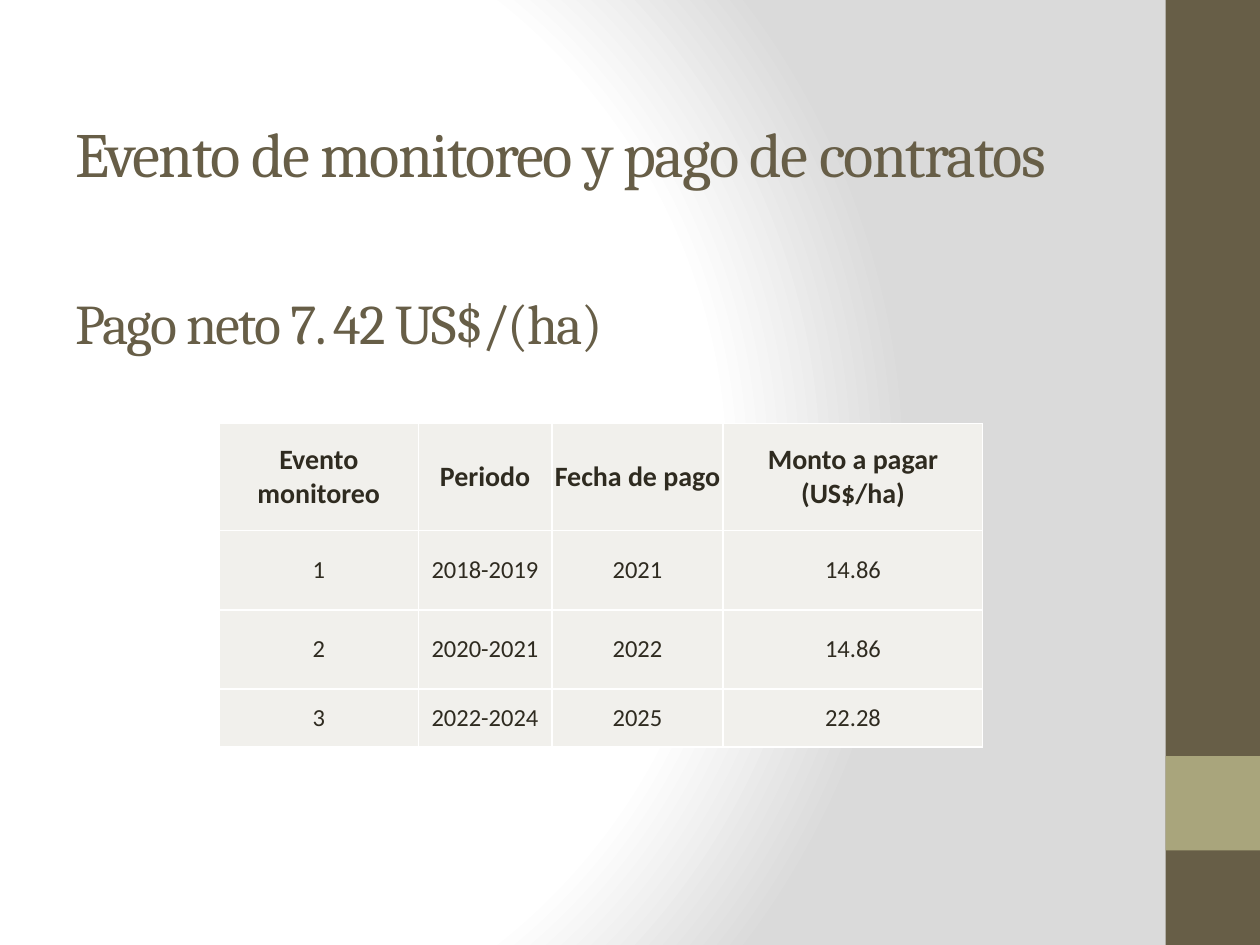
from dataclasses import dataclass

from lxml import etree
from pptx import Presentation
from pptx.dml.color import RGBColor
from pptx.enum.shapes import MSO_SHAPE
from pptx.enum.text import MSO_ANCHOR, PP_ALIGN
from pptx.oxml import parse_xml
from pptx.oxml.ns import nsdecls, qn
from pptx.util import Inches, Pt

RECTANGLE = MSO_SHAPE.RECTANGLE
TOP, MIDDLE = MSO_ANCHOR.TOP, MSO_ANCHOR.MIDDLE
CENTER = PP_ALIGN.CENTER
BLANK_LAYOUT = 6


@dataclass(frozen=True)
class Theme:
    brown: str = "675E47"
    olive: str = "A9A57C"
    ink: str = "2F2B20"
    cell: str = "F1F0EC"
    white: str = "FFFFFF"
    grey: str = "DADADA"
    heading_font: str = "Cambria"
    body_font: str = "Calibri"
    title_size: int = 36
    subtitle_size: int = 32
    header_size: int = 16
    body_size: int = 14


class SlideBuilder:
    def __init__(self, slide, theme):
        self.s = slide
        self.theme = theme

    def background(self):
        """Circular gradient whose centre lies left of the middle."""
        t = self.theme
        stops = "".join(
            f'<a:gs pos="{pos * 1000}"><a:srgbClr val="{color}"/></a:gs>'
            for pos, color in ((0, t.white), (75, t.white), (100, t.grey))
        )
        bg = parse_xml(
            f'<p:bg {nsdecls("p", "a")}><p:bgPr><a:gradFill rotWithShape="1">'
            f'<a:gsLst>{stops}</a:gsLst><a:path path="circle">'
            '<a:fillToRect l="20000" t="50000" r="100000" b="50000"/>'
            "</a:path></a:gradFill><a:effectLst/></p:bgPr></p:bg>"
        )
        self.s.element.cSld.insert(0, bg)

    def block(self, left, top, width, height, color):
        sp = self.s.shapes.add_shape(
            RECTANGLE, Inches(left), Inches(top), Inches(width), Inches(height)
        )
        sp.shadow.inherit = False
        sp.fill.solid()
        sp.fill.fore_color.rgb = RGBColor.from_string(color)
        sp.line.fill.background()

    def run(self, p, text, font, size, color, bold=False):
        r = p.add_run()
        r.text = text
        r.font.name = font
        r.font.size = Pt(size)
        r.font.bold = bold
        r.font.color.rgb = RGBColor.from_string(color)
        return r

    def heading(self, left, top, width, height, title, subtitle):
        t = self.theme
        sp = self.s.shapes.add_textbox(
            Inches(left), Inches(top), Inches(width), Inches(height)
        )
        tf = sp.text_frame
        tf.word_wrap = True
        tf.vertical_anchor = TOP
        tf.margin_top = Inches(0.61)
        title_p, subtitle_p = tf.paragraphs[0], tf.add_paragraph()
        subtitle_p.space_before = Pt(56)
        for p, text, size in (
            (title_p, title, t.title_size),
            (subtitle_p, subtitle, t.subtitle_size),
        ):
            r = self.run(p, text, t.heading_font, size, t.brown)
            r.font._element.set("spc", "-100")

    def table(self, left, top, col_widths, row_heights, rows):
        frame = self.s.shapes.add_table(
            len(rows), len(col_widths), Inches(left), Inches(top),
            Inches(sum(col_widths)), Inches(sum(row_heights)),
        )
        table = frame.table
        for column, width in zip(table.columns, col_widths):
            column.width = Inches(width)
        for row, height in zip(table.rows, row_heights):
            row.height = Inches(height)
        for i, values in enumerate(rows):
            for j, text in enumerate(values):
                self.cell(table.cell(i, j), text, header=i == 0)

    def cell(self, cell, text, header):
        t = self.theme
        cell.vertical_anchor = MIDDLE
        cell.margin_left = cell.margin_right = Inches(0.01)
        cell.margin_top = cell.margin_bottom = Inches(0.07)
        p = cell.text_frame.paragraphs[0]
        p.alignment = CENTER
        size = t.header_size if header else t.body_size
        self.run(p, text, t.body_font, size, t.ink, bold=header)
        self.borders(cell)
        cell.fill.solid()
        cell.fill.fore_color.rgb = RGBColor.from_string(t.cell)

    def borders(self, cell):
        tc_pr = cell._tc.get_or_add_tcPr()
        for side in ("a:lnL", "a:lnR", "a:lnT", "a:lnB"):
            ln = etree.SubElement(tc_pr, qn(side), w=str(Pt(1)))
            fill = etree.SubElement(ln, qn("a:solidFill"))
            etree.SubElement(fill, qn("a:srgbClr"), val=self.theme.white)


def main():
    prs = Presentation()
    prs.slide_width, prs.slide_height = Inches(10), Inches(7.5)
    theme = Theme()
    slide = SlideBuilder(
        prs.slides.add_slide(prs.slide_layouts[BLANK_LAYOUT]), theme
    )
    slide.background()
    slide.block(9.25, 0, 0.75, 7.5, theme.brown)
    slide.block(9.25, 6, 0.75, 0.75, theme.olive)
    slide.heading(
        0.5, 0.3, 8.33, 1.53,
        "Evento de monitoreo y pago de contratos",
        "Pago neto 7. 42 US$/(ha)",
    )
    slide.table(
        1.74, 3.36,
        col_widths=(1.58, 1.06, 1.36, 2.06),
        row_heights=(0.85, 0.63, 0.63, 0.46),
        rows=(
            ("Evento monitoreo", "Periodo", "Fecha de pago", "Monto a pagar (US$/ha)"),
            ("1", "2018-2019", "2021", "14.86"),
            ("2", "2020-2021", "2022", "14.86"),
            ("3", "2022-2024", "2025", "22.28"),
        ),
    )
    prs.save("out.pptx")


if __name__ == "__main__":
    main()
